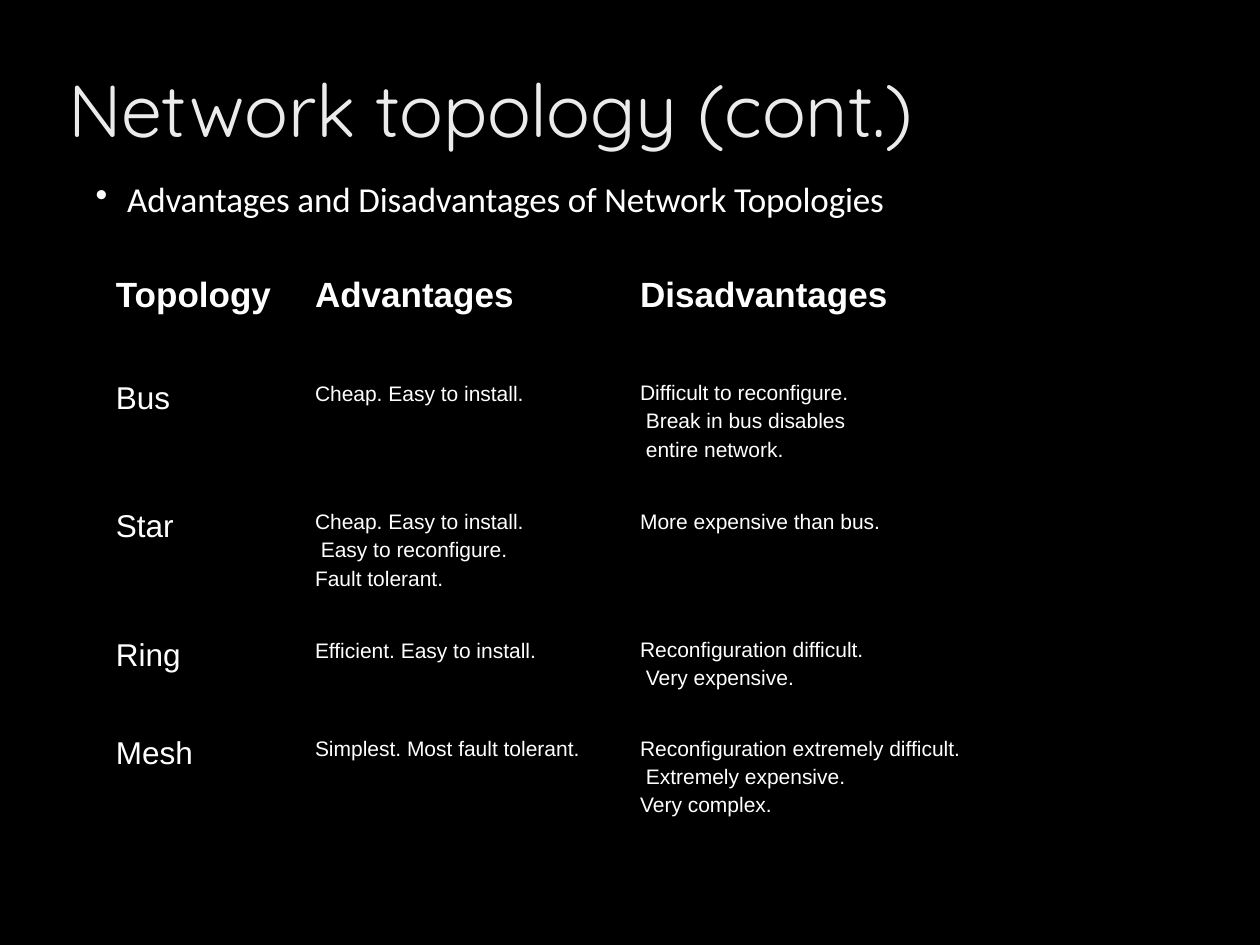
"""Build a slide that sets out the advantages and disadvantages of network topologies."""
from copy import deepcopy

from lxml import etree
from pptx import Presentation
from pptx.dml.color import RGBColor
from pptx.enum.text import MSO_ANCHOR, PP_ALIGN
from pptx.oxml.ns import qn
from pptx.util import Inches, Pt

TOP, LEFT = MSO_ANCHOR.TOP, PP_ALIGN.LEFT
BLACK, WHITE, PALE = "000000", "FFFFFF", "EBEBEB"
TITLE_ONLY = 5


def color(hex_code):
    return RGBColor.from_string(hex_code)


def write(frame, text, font="Arial", size=12, ink=WHITE, bold=False, tracking=0,
          inset=0.01, before=(0,), spacing=(1,), indent=0, hanging=0, bullet=None):
    frame.word_wrap = True
    frame.margin_left = frame.margin_right = frame.margin_bottom = 0
    frame.margin_top = Inches(inset)
    frame.vertical_anchor = TOP
    frame.text = text
    for paragraph, gap, line in zip(frame.paragraphs, before, spacing):
        paragraph.alignment = LEFT
        paragraph.space_before = Pt(gap)
        paragraph.line_spacing = float(line)
        properties = paragraph._p.get_or_add_pPr()
        properties.set("marL", str(Inches(indent)))
        properties.set("indent", str(Inches(hanging)))
        if bullet:
            etree.SubElement(properties, qn("a:buChar"), char=bullet)
        for run in paragraph.runs:
            run.font.name, run.font.size, run.font.bold = font, Pt(size), bold
            run.font.color.rgb = color(ink)
            run.font._element.set("spc", str(round(tracking * 100)))
        for line_break in paragraph._p.findall(qn("a:br")):
            line_break.insert(0, deepcopy(paragraph.runs[0].font._element))


deck = Presentation()
deck.slide_width, deck.slide_height = Inches(10), Inches(7.5)
width, height = deck.slide_width, deck.slide_height
slide = deck.slides.add_slide(deck.slide_layouts[TITLE_ONLY])
slide.background.fill.solid()
slide.background.fill.fore_color.rgb = color(BLACK)

heading = slide.shapes.title
heading.left, heading.top = int(width * 0.053), int(height / 15)
heading.width, heading.height = int(width * 0.772), int(height * 0.204)
write(heading.text_frame, "Network topology (cont.)", font="Quicksand", size=42, ink=PALE,
      tracking=-0.1, before=(1.1,), indent=0.01)

subject = slide.shapes.add_textbox(int(width * 0.075), int(height * 0.187),
                                   int(width * 0.635), int(height * 0.048))
write(subject.text_frame, "Advantages and Disadvantages of Network Topologies",
      font="Calibri", size=20, tracking=-0.1, before=(1.1,), indent=0.26, hanging=-0.25,
      bullet="•")

topologies = [
    ("Topology", "Advantages", "Disadvantages"),
    ("Bus", "Cheap. Easy to install.",
     "Difficult to reconfigure.\v Break in bus disables\v entire network."),
    ("Star", "Cheap. Easy to install.\v Easy to reconfigure.\nFault tolerant.",
     "More expensive than bus."),
    ("Ring", "Efficient. Easy to install.", "Reconfiguration difficult.\v Very expensive."),
    ("Mesh", "Simplest. Most fault tolerant.",
     "Reconfiguration extremely difficult.\v Extremely expensive.\nVery complex."),
]
column_widths = [1.58, 2.58, 3.67]
row_heights = [0.83, 1.02, 1.02, 0.78, 1.02]
comparison = slide.shapes.add_table(
    len(row_heights), len(column_widths), int(width * 0.082), int(height * 0.287),
    Inches(sum(column_widths)), Inches(sum(row_heights))).table
comparison.first_row = comparison.horz_banding = False
for column, column_width in zip(comparison.columns, column_widths):
    column.width = Inches(column_width)
for row, row_height in zip(comparison.rows, row_heights):
    row.height = Inches(row_height)

last_row, last_column = len(row_heights) - 1, len(column_widths) - 1
for r, topology in enumerate(topologies):
    for c, entry in enumerate(topology):
        cell = comparison.cell(r, c)
        if r == 0:
            style = dict(size=20, bold=True, inset=0.04, before=(3,))
        elif c == 0:
            style = dict(size=18, inset=0.04, before=(3.1,))
        elif "\v" in entry:
            style = dict(before=(0.4, 3), spacing=(1.2, 1))
        else:
            style = dict(inset=0.05, before=(3.3,))
        write(cell.text_frame, entry, indent=0.1, **style)
        cell.margin_left = cell.margin_right = cell.margin_bottom = 0
        cell.margin_top = Inches(style.get("inset", 0.01))
        cell.vertical_anchor = TOP
        edges = {"a:lnL": c == 0, "a:lnR": c == last_column,
                 "a:lnT": r == 0, "a:lnB": r == last_row}
        for edge, outer in edges.items():
            border = etree.SubElement(cell._tc.get_or_add_tcPr(), qn(edge),
                                      w=str(Pt(2.25 if outer else 1)))
            paint = etree.SubElement(border, qn("a:solidFill"))
            etree.SubElement(paint, qn("a:srgbClr"), val=BLACK)
        cell.fill.background()

deck.save("out.pptx")
